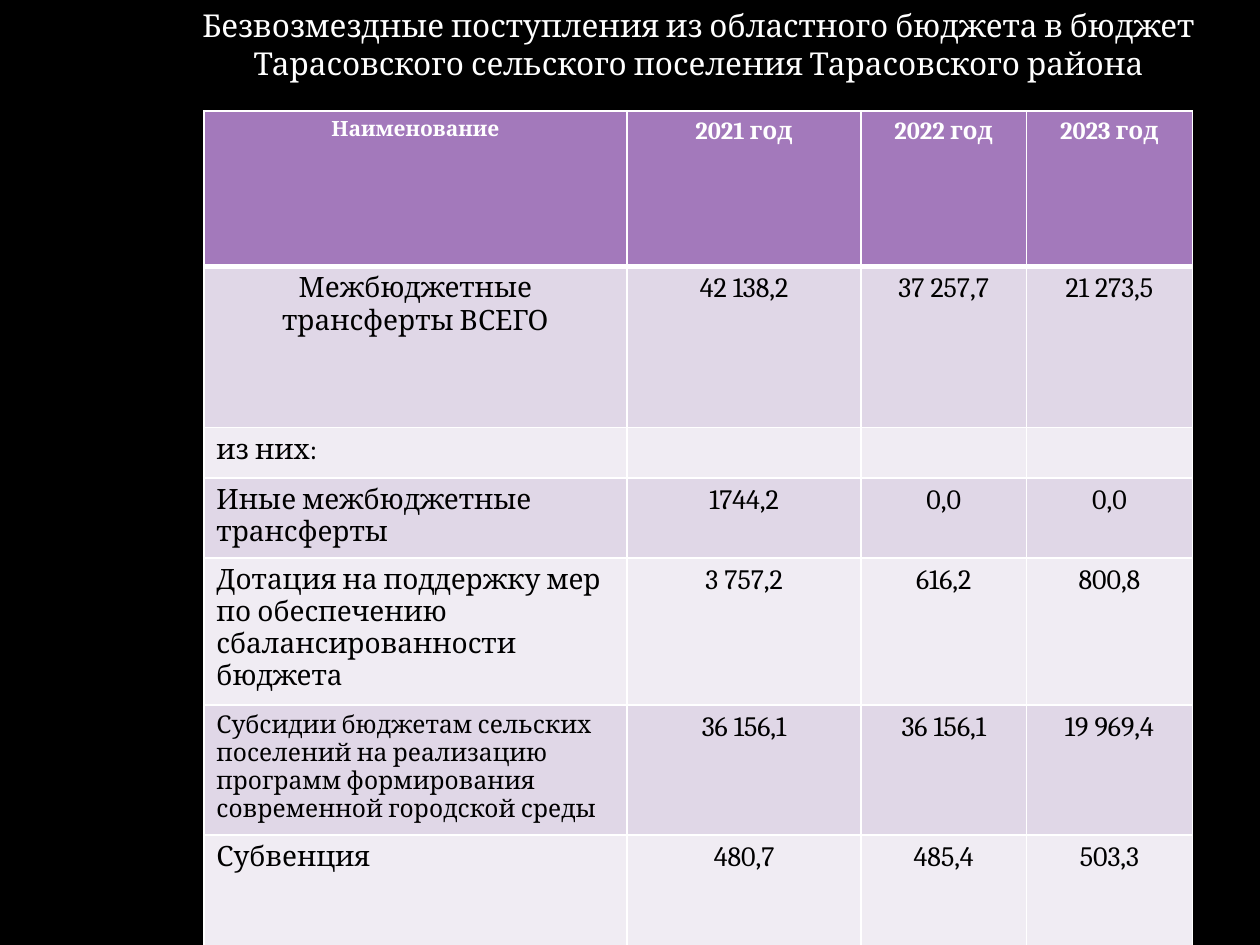
from dataclasses import dataclass
from itertools import product

from lxml import etree
from pptx import Presentation
from pptx import util as u
from pptx.dml import color
from pptx.enum import text
from pptx.oxml import ns

HEADINGS = ["Наименование", "2021 год", "2022 год", "2023 год"]
ROWS = [
    ["Межбюджетные трансферты ВСЕГО", "42 138,2", "37 257,7", "21 273,5"],
    ["из них:", "", "", ""],
    ["Иные межбюджетные трансферты", "1744,2", "0,0", "0,0"],
    ["Дотация на поддержку мер по обеспечению сбалансированности бюджета",
     "3 757,2", "616,2", "800,8"],
    ["Субсидии бюджетам сельских поселений на реализацию программ "
     "формирования современной городской среды",
     "36 156,1", "36 156,1", "19 969,4"],
    ["Субвенция", "480,7", "485,4", "503,3"],
]
COLUMN_WIDTHS = [8.53, 4.72, 3.33, 3.35]
ROW_HEIGHTS = [3.13, 3.25, 0.93, 1.61, 2.96, 2.62, 3.25]
SUBSIDY_ROW = 5


def rgb(value):
    return color.RGBColor.from_string(value)


@dataclass
class SlideBuilder:
    """Holds the style and the current slide, and adds elements to it."""

    page: object
    font: str = "Cambria"
    light: str = "FFFFFF"
    dark: str = "000000"
    header: str = "A379BB"
    bands: tuple = ("F0ECF3", "E0D7E7")

    def background(self):
        fill = self.page.background.fill
        fill.solid()
        fill.fore_color.rgb = rgb(self.dark)

    def add_words(self, frame, words, size, ink, centred=True, bold=False):
        para = frame.paragraphs[0]
        para.alignment = text.PP_ALIGN.CENTER if centred else text.PP_ALIGN.LEFT
        span = para.add_run()
        span.text = words
        span.font.name = self.font
        span.font.size = u.Pt(size)
        span.font.bold = bold
        span.font.color.rgb = rgb(ink)

    def title(self, words, left, top, width, height):
        box = self.page.shapes.add_textbox(
            u.Cm(left), u.Cm(top), u.Cm(width), u.Cm(height))
        box.text_frame.word_wrap = True
        box.text_frame.auto_size = text.MSO_AUTO_SIZE.SHAPE_TO_FIT_TEXT
        self.add_words(box.text_frame, words, 18, self.light)

    def borders(self, cell, top, bottom):
        properties = cell._tc.get_or_add_tcPr()
        for side, points in zip("LRTB", (1, 1, top, bottom)):
            line = etree.SubElement(
                properties, ns.qn(f"a:ln{side}"), w=str(u.Pt(points)))
            fill = etree.SubElement(line, ns.qn("a:solidFill"))
            etree.SubElement(fill, ns.qn("a:srgbClr"), val=self.light)

    def table(self, left, top, headings, rows, widths, heights):
        frame = self.page.shapes.add_table(
            len(heights), len(widths), u.Cm(left), u.Cm(top),
            u.Cm(sum(widths)), u.Cm(sum(heights)))
        grid = frame.table
        grid.horz_banding = False
        for column, width in zip(grid.columns, widths):
            column.width = u.Cm(width)
        for row, height in zip(grid.rows, heights):
            row.height = u.Cm(height)
        content = [headings, *rows]
        for row, column in product(range(len(heights)), range(len(widths))):
            cell = grid.cell(row, column)
            heading, name = row == 0, column == 0
            self.borders(cell, 3 if row == 1 else 1, 3 if heading else 1)
            cell.fill.solid()
            cell.fill.fore_color.rgb = rgb(
                self.header if heading else self.bands[row % 2])
            if heading:
                size = 12 if name else 14
            else:
                size = 14 if name and row == SUBSIDY_ROW else 16
            self.add_words(cell.text_frame, content[row][column], size,
                           self.light if heading else self.dark,
                           centred=not name or row < 2, bold=heading)


def main():
    deck = Presentation()
    deck.slide_width, deck.slide_height = u.Cm(25.4), u.Cm(19.05)
    builder = SlideBuilder(deck.slides.add_slide(deck.slide_layouts[6]))
    builder.background()
    builder.title(
        "Безвозмездные поступления из областного бюджета в бюджет "
        "Тарасовского сельского поселения Тарасовского района",
        2.77, 0, 22.63, 2.57)
    builder.table(4.11, 2.24, HEADINGS, ROWS, COLUMN_WIDTHS, ROW_HEIGHTS)
    deck.save("out.pptx")


if __name__ == "__main__":
    main()
